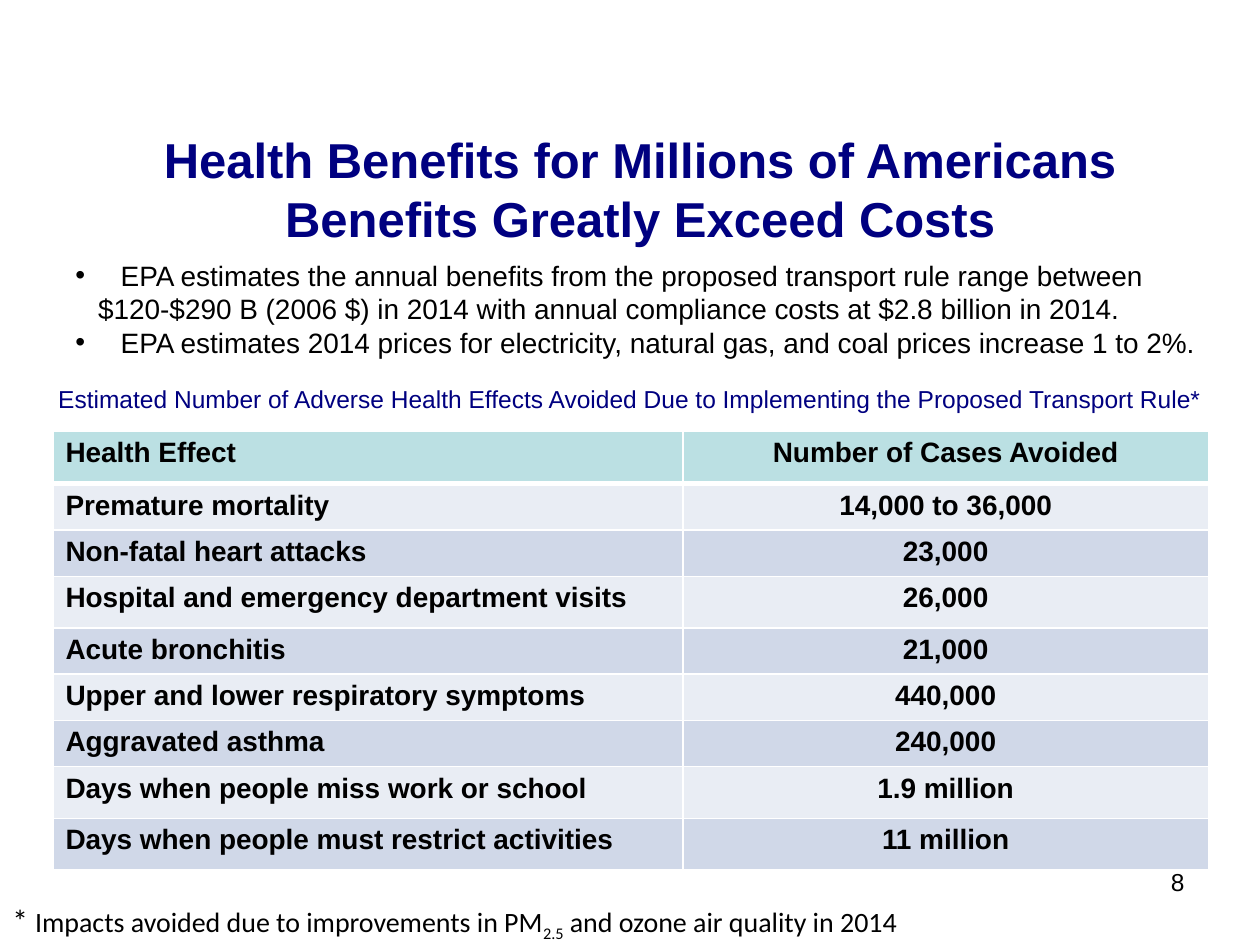
from typing import NamedTuple

import pptx
import pptx.dml.color
import pptx.enum.text
import pptx.oxml.ns
import pptx.util
from lxml import etree

Inches = pptx.util.Inches
Pt = pptx.util.Pt
RGBColor = pptx.dml.color.RGBColor
Align = pptx.enum.text.PP_ALIGN
Anchor = pptx.enum.text.MSO_ANCHOR
qn = pptx.oxml.ns.qn

BLACK = RGBColor(0x00, 0x00, 0x00)
NAVY = RGBColor(0x00, 0x00, 0x80)
HEADER_TEAL = RGBColor(0xBB, 0xE0, 0xE3)
BAND_LIGHT = RGBColor(0xE9, 0xED, 0xF4)
BAND_DARK = RGBColor(0xD0, 0xD8, 0xE8)
WHITE = RGBColor(0xFF, 0xFF, 0xFF)


class Box(NamedTuple):
    left: float
    top: float
    width: float
    height: float


class HealthEffect(NamedTuple):
    name: str
    cases: str
    height: float


class Estimate(NamedTuple):
    text: str
    margin: float
    bulleted: bool


HEALTH_EFFECTS = [
    HealthEffect("Health Effect", "Number of Cases Avoided", 0.42),
    HealthEffect("Premature mortality", "14,000 to 36,000", 0.34),
    HealthEffect("Non-fatal heart attacks", "23,000", 0.34),
    HealthEffect("Hospital and emergency department visits", "26,000", 0.41),
    HealthEffect("Acute bronchitis", "21,000", 0.34),
    HealthEffect("Upper and lower respiratory symptoms", "440,000", 0.35),
    HealthEffect("Aggravated asthma", "240,000", 0.34),
    HealthEffect("Days when people miss work or school", "1.9 million", 0.41),
    HealthEffect("Days when people must restrict activities", "11 million", 0.41),
]
COLUMN_WIDTHS = (5, 4.17)

ESTIMATES = [
    Estimate("EPA estimates the annual benefits from the proposed transport rule "
             "range between", 0.36, True),
    Estimate("$120-$290 B (2006 $) in 2014 with annual compliance costs at "
             "$2.8 billion in 2014.", 0.18, False),
    Estimate("EPA estimates 2014 prices for electricity, natural gas, and coal "
             "prices increase 1 to 2%.", 0.36, True),
]


def style_font(font, size: float, color: RGBColor = BLACK, bold: bool = False,
               name: str = "Arial") -> None:
    font.name = name
    font.size = Pt(size)
    font.bold = bold
    font.color.rgb = color


def add_text(slide, box: Box, text: str, size: float, color: RGBColor = BLACK,
             align=Align.LEFT, bold: bool = False, anchor=Anchor.TOP):
    frame = slide.shapes.add_textbox(*map(Inches, box)).text_frame
    frame.word_wrap = True
    frame.vertical_anchor = anchor
    frame.text = text
    for paragraph in frame.paragraphs:
        paragraph.alignment = align
        for run in paragraph.runs:
            style_font(run.font, size, color, bold)
    return frame


def set_indent(paragraph, estimate: Estimate) -> None:
    properties = paragraph._p.get_or_add_pPr()
    properties.set("marL", str(Inches(estimate.margin)))
    properties.set("indent", str(-Inches(estimate.margin) if estimate.bulleted else 0))
    if estimate.bulleted:
        etree.SubElement(properties, qn("a:buFont"), typeface="Arial")
        etree.SubElement(properties, qn("a:buChar"), char="•")
    else:
        etree.SubElement(properties, qn("a:buNone"))


def set_border(cell, side: str, width: float) -> None:
    line = etree.Element(qn(f"a:ln{side}"), w=str(Pt(width)))
    fill = etree.SubElement(line, qn("a:solidFill"))
    etree.SubElement(fill, qn("a:srgbClr"), val=str(WHITE))
    cell._tc.get_or_add_tcPr().append(line)


def fill_cell(cell, text: str, row: int, align) -> None:
    cell.text = text
    paragraph = cell.text_frame.paragraphs[0]
    paragraph.alignment = align
    style_font(paragraph.runs[0].font, 16, bold=True)
    # Borders come before the fill; a thick rule sits under the header
    for side in "LRTB":
        under_header = (row, side) in ((0, "B"), (1, "T"))
        set_border(cell, side, 3 if under_header else 1)
    cell.fill.solid()
    band = BAND_LIGHT if row % 2 else BAND_DARK
    cell.fill.fore_color.rgb = band if row else HEADER_TEAL


def add_effects_table(slide, box: Box) -> None:
    table = slide.shapes.add_table(
        len(HEALTH_EFFECTS), len(COLUMN_WIDTHS), *map(Inches, box)).table
    for column, width in zip(table.columns, COLUMN_WIDTHS):
        column.width = Inches(width)
    for row, effect in enumerate(HEALTH_EFFECTS):
        table.rows[row].height = Inches(effect.height)
        fill_cell(table.cell(row, 0), effect.name, row, Align.LEFT)
        fill_cell(table.cell(row, 1), effect.cases, row, Align.CENTER)


def add_footnote(slide, box: Box) -> None:
    frame = add_text(slide, box, "", 16)
    parts = [("* ", 18, 0), ("Impacts avoided due to improvements in PM", 16, 0),
             ("2.5", 16, -25000), (" and ozone air quality in 2014", 16, 0)]
    for text, size, baseline in parts:
        run = frame.paragraphs[0].add_run()
        run.text = text
        style_font(run.font, size, name="Calibri")
        if baseline:
            run._r.get_or_add_rPr().set("baseline", str(baseline))


def main() -> None:
    presentation = pptx.Presentation()
    presentation.slide_width = Inches(10)
    presentation.slide_height = Inches(7.5)
    slide = presentation.slides.add_slide(presentation.slide_layouts[6])

    # Page number and footnote
    add_text(slide, Box(7.17, 6.83, 2.33, 0.52), "8", 14, align=Align.RIGHT)
    add_footnote(slide, Box(0, 7.1, 9, 0.4))

    # Title
    add_text(slide, Box(0.58, 1.08, 9, 0.83),
             "Health Benefits for Millions of Americans\nBenefits Greatly Exceed Costs",
             28, NAVY, Align.CENTER, True, Anchor.MIDDLE)

    # Table with its caption
    add_text(slide, Box(0, 3, 10, 0.33),
             "Estimated Number of Adverse Health Effects Avoided Due to "
             "Implementing the Proposed Transport Rule*", 14, NAVY, Align.CENTER)
    add_effects_table(slide, Box(0.42, 3.42, 9.17, 3.47))

    # Cost and price estimates
    estimates = add_text(slide, Box(0.5, 2, 9.25, 0.9),
                         "\n".join(item.text for item in ESTIMATES), 16)
    for paragraph, estimate in zip(estimates.paragraphs, ESTIMATES):
        set_indent(paragraph, estimate)

    presentation.save("out.pptx")


if __name__ == "__main__":
    main()
